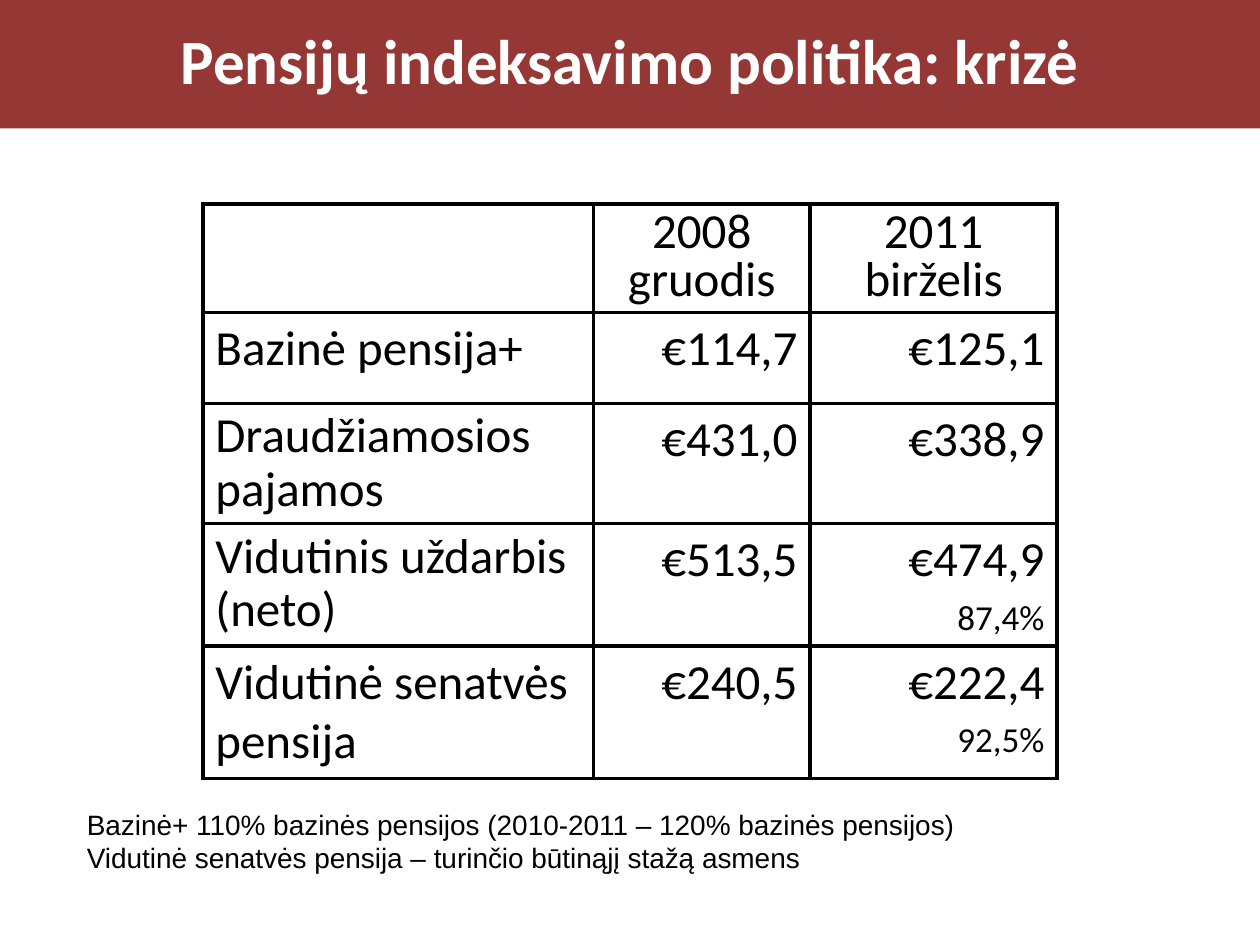
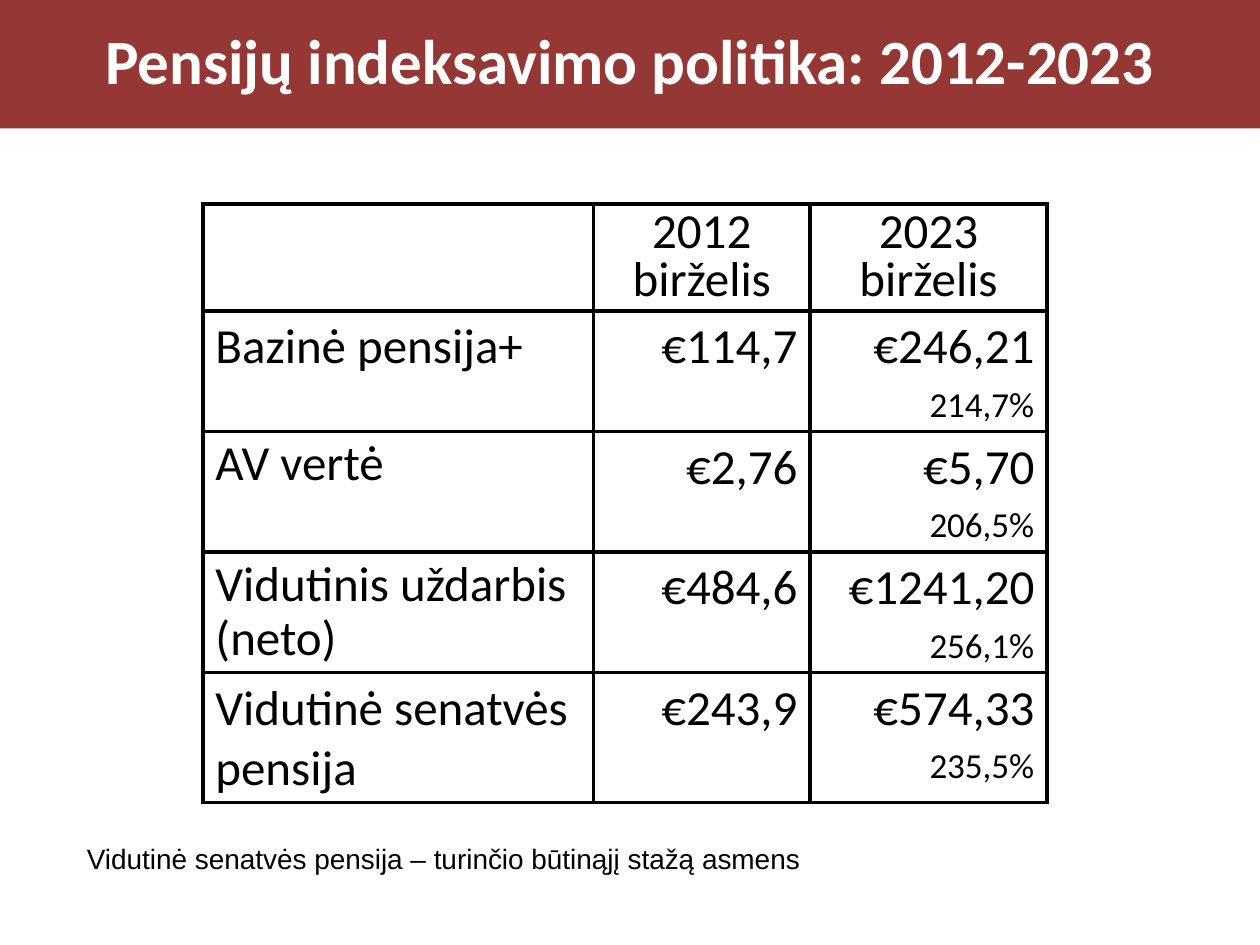
from dataclasses import dataclass

from lxml import etree
from pptx import Presentation
from pptx import util as u
from pptx.dml.color import RGBColor
from pptx.enum import shapes, text
from pptx.oxml import ns


@dataclass(frozen=True)
class Theme:
    band: RGBColor = RGBColor(0x95, 0x37, 0x35)
    light: RGBColor = RGBColor(0xFF, 0xFF, 0xFF)
    ink: RGBColor = RGBColor(0, 0, 0)
    font: str = "Calibri"
    note_font: str = "Arial"
    title: int = 36
    body: int = 28
    percent: int = 20
    note: int = 16
    border: float = 2.25


theme = Theme()
LEFT, CENTER, RIGHT = text.PP_ALIGN.LEFT, text.PP_ALIGN.CENTER, text.PP_ALIGN.RIGHT

COLUMN_SHARES = (0.31, 0.172)  # of the slide width; the last column varies
ROW_SHARES = (0.11, 0.096, 0.11, 0.121, 0.124)  # of the slide height
LABEL_SPACING = (None, 0.9, 0.9, None)

# Each row: label, earlier value, later value (with its percentage on a second line)
slides = [
    {
        "title": "Pensijų indeksavimo politika: krizė",
        "last_column": 0.196,
        "rows": [
            ("", "2008\ngruodis", "2011\nbirželis"),
            ("Bazinė pensija+", "€114,7", "€125,1"),
            ("Draudžiamosios pajamos", "€431,0", "€338,9"),
            ("Vidutinis uždarbis (neto)", "€513,5", "€474,9\n87,4%"),
            ("Vidutinė senatvės pensija", "€240,5", "€222,4\n92,5%"),
        ],
        "notes": [
            "Bazinė+ 110% bazinės pensijos (2010-2011 – 120% bazinės pensijos)",
            "Vidutinė senatvės pensija – turinčio būtinąjį stažą asmens",
        ],
    },
    {
        "title": "Pensijų indeksavimo politika: 2012-2023",
        "last_column": 0.188,
        "rows": [
            ("", "2012\nbirželis", "2023\nbirželis"),
            ("Bazinė pensija+", "€114,7", "€246,21\n214,7%"),
            ("AV vertė", "€2,76", "€5,70\n206,5%"),
            ("Vidutinis uždarbis (neto)", "€484,6", "€1241,20\n256,1%"),
            ("Vidutinė senatvės pensija", "€243,9", "€574,33\n235,5%"),
        ],
        "notes": ["Vidutinė senatvės pensija – turinčio būtinąjį stažą asmens"],
    },
]


def style_paragraph(para, size, font=theme.font, color=theme.ink, align=LEFT, spacing=None, bold=False):
    para.alignment = align
    if spacing:
        para.line_spacing = spacing
    for span in para.runs:
        span.font.size = u.Pt(size)
        span.font.name = font
        span.font.color.rgb = color
        span.font.bold = bold


def outline_cell(cell):
    properties = cell._tc.get_or_add_tcPr()
    for side in ("a:lnL", "a:lnR", "a:lnT", "a:lnB"):
        line = etree.SubElement(properties, ns.qn(side), w=str(u.Pt(theme.border)))
        fill = etree.SubElement(line, ns.qn("a:solidFill"))
        etree.SubElement(fill, ns.qn("a:srgbClr"), val=str(theme.ink))
    cell.fill.background()


deck = Presentation()
deck.slide_width, deck.slide_height = u.Inches(10), u.Inches(7.5)
width, height = deck.slide_width, deck.slide_height

for content in slides:
    page = deck.slides.add_slide(deck.slide_layouts[6])

    # Title band
    band = page.shapes.add_shape(shapes.MSO_SHAPE.RECTANGLE, 0, 0, width, int(height * 0.136))
    band.shadow.inherit = False
    band.fill.solid()
    band.fill.fore_color.rgb = theme.band
    band.line.fill.background()
    band.text_frame.text = content["title"]
    band.text_frame.vertical_anchor = text.MSO_ANCHOR.MIDDLE
    style_paragraph(band.text_frame.paragraphs[0], theme.title, color=theme.light,
                    align=CENTER, spacing=0.9, bold=True)

    # Pension table
    column_shares = (*COLUMN_SHARES, content["last_column"])
    table = page.shapes.add_table(
        len(ROW_SHARES), len(column_shares), int(width * 0.161), int(height * 0.216),
        int(width * sum(column_shares)), int(height * sum(ROW_SHARES))).table
    table.first_row = table.horz_banding = False
    for column, share in zip(table.columns, column_shares):
        column.width = int(width * share)
    for row, share in zip(table.rows, ROW_SHARES):
        row.height = int(height * share)

    for row_index, values in enumerate(content["rows"]):
        for column_index, value in enumerate(values):
            cell = table.cell(row_index, column_index)
            cell.text_frame.text = value
            outline_cell(cell)
            for line_index, para in enumerate(cell.text_frame.paragraphs):
                if row_index == 0:
                    style_paragraph(para, theme.body, align=CENTER, spacing=0.8)
                    continue
                size = theme.percent if line_index else theme.body
                para.space_before = u.Pt(size * 0.2)
                if column_index == 0:
                    style_paragraph(para, size, spacing=LABEL_SPACING[row_index - 1])
                else:
                    style_paragraph(para, size, align=RIGHT)

    # Footnotes end on one common baseline, whatever their number
    note_height = u.Inches(0.1 + 0.27 * len(content["notes"]))
    note_box = page.shapes.add_textbox(
        int(width * 0.059), int(height * 0.933) - note_height, int(width * 0.882), note_height)
    note_box.text_frame.word_wrap = True
    note_box.text_frame.text = "\n".join(content["notes"])
    for para in note_box.text_frame.paragraphs:
        style_paragraph(para, theme.note, font=theme.note_font)

deck.save("out.pptx")
